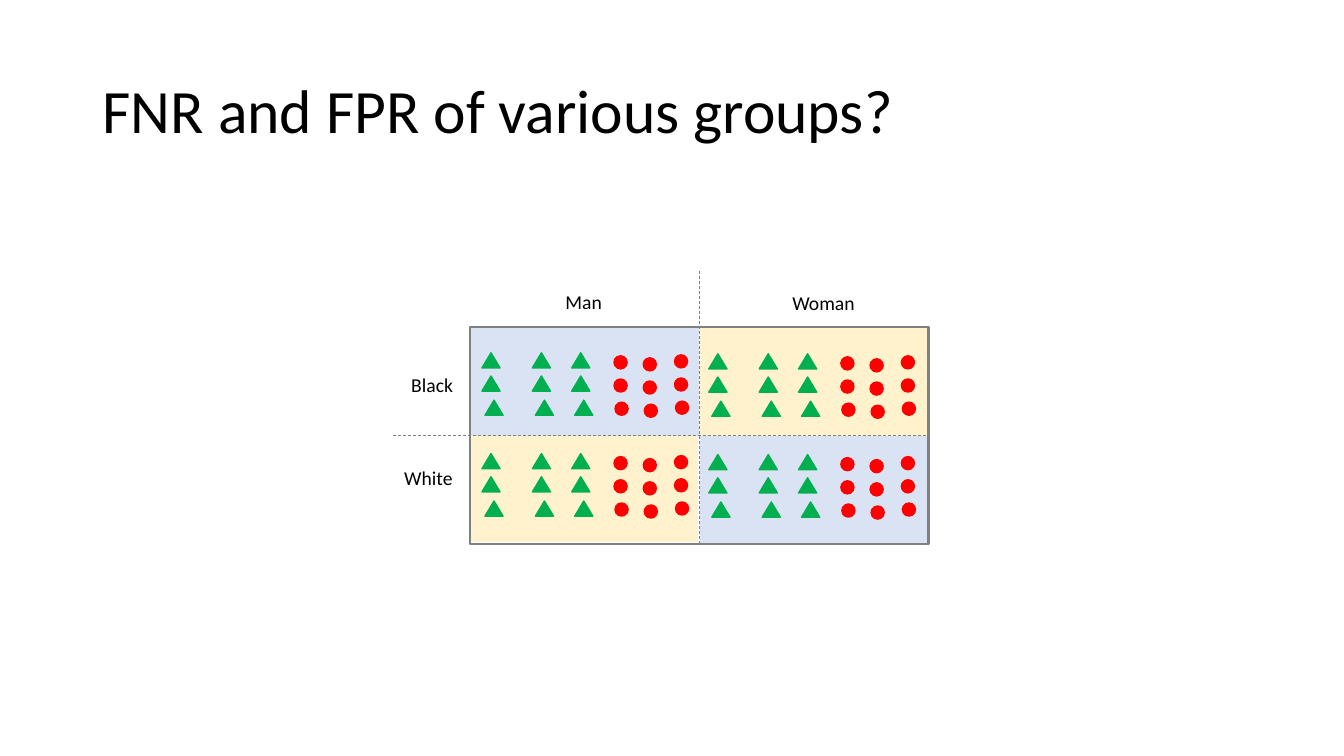
from dataclasses import dataclass
from itertools import product

from lxml.etree import SubElement
from pptx import Presentation
from pptx.dml.color import RGBColor
from pptx.enum.dml import MSO_LINE
from pptx.enum.shapes import MSO_CONNECTOR, MSO_SHAPE
from pptx.enum.text import MSO_ANCHOR
from pptx.oxml.ns import qn
from pptx.util import Inches, Pt


@dataclass(frozen=True)
class Theme:
    font: str = "Calibri"
    title_size: int = 44
    label_size: int = 14
    text: str = "000000"
    frame: str = "808080"
    blue: str = "DAE3F3"
    yellow: str = "FFF2CC"
    green: str = "00B050"
    red: str = "FF0000"


THEME = Theme()

# Quadrants: offset from the frame's corner, size, colour
QUADRANTS = [
    (2.29, 0, 2.26, 1.08, THEME.yellow),
    (0.02, 1.06, 2.24, 1.07, THEME.yellow),
    (0, 0, 2.27, 1.08, THEME.blue),
    (2.29, 1.09, 2.26, 1.07, THEME.blue),
]

# Marks: preset, width, height, colour, column offsets, row offsets
MARKS = [
    (MSO_SHAPE.ISOSCELES_TRIANGLE, 0.18, 0.15, THEME.green,
     [(0, 0), (0.5, 0), (0.89, 0)], [(0, 0), (0, 0.23), (0.03, 0.47)]),
    (MSO_SHAPE.OVAL, 0.13, 0.13, THEME.red,
     [(1.31, 0.03), (1.6, 0.05), (1.91, 0.02)],
     [(0, 0), (0, 0.23), (0.01, 0.46)]),
]


def add_filled(shapes, preset, left, top, width, height, color):
    shape = shapes.add_shape(preset, Inches(left), Inches(top),
                             Inches(width), Inches(height))
    shape.shadow.inherit = False
    shape.fill.solid()
    shape.fill.fore_color.rgb = RGBColor.from_string(color)
    shape.line.color.rgb = RGBColor.from_string(color)
    shape.line.width = Pt(1)
    return shape


def add_text(slide, text, left, top, width, height, size, wrap=False):
    box = slide.shapes.add_textbox(Inches(left), Inches(top),
                                   Inches(width), Inches(height))
    frame = box.text_frame
    frame.word_wrap = wrap
    paragraph = frame.paragraphs[0]
    paragraph.text = text
    paragraph.font.name = THEME.font
    paragraph.font.size = Pt(size)
    paragraph.font.color.rgb = RGBColor.from_string(THEME.text)
    return frame


def add_title(slide, left, top, width, height):
    title = add_text(slide, "FNR and FPR of various groups?", left, top,
                     width, height, THEME.title_size, wrap=True)
    title.vertical_anchor = MSO_ANCHOR.MIDDLE
    title.paragraphs[0].line_spacing = 0.9


def add_divider(slide, start_x, start_y, grid_frame, side):
    divider = slide.shapes.add_connector(
        MSO_CONNECTOR.STRAIGHT, Inches(start_x), Inches(start_y),
        Inches(start_x), Inches(start_y))
    divider.end_connect(grid_frame, side)
    divider.line.color.rgb = RGBColor.from_string(THEME.frame)
    divider.line.width = Pt(0.5)
    divider.line.dash_style = MSO_LINE.DASH
    SubElement(divider._element.spPr, qn("a:effectLst"))


def add_marks(slide, left, top):
    group = slide.shapes.add_group_shape()
    for preset, width, height, color, columns, rows in MARKS:
        for (col_x, col_y), (row_x, row_y) in product(columns, rows):
            add_filled(group.shapes, preset, left + col_x + row_x,
                       top + col_y + row_y, width, height, color)


def add_group_grid(slide, left, top, width, height):
    # Coloured quadrants
    for x, y, w, h, color in QUADRANTS:
        add_filled(slide.shapes, MSO_SHAPE.RECTANGLE,
                   left + x, top + y, w, h, color)

    # Frame and dashed dividers
    grid_frame = add_filled(slide.shapes, MSO_SHAPE.RECTANGLE,
                            left, top, width, height, THEME.frame)
    grid_frame.fill.background()
    grid_frame.line.width = Pt(1.5)
    add_divider(slide, left - 0.76, top + height / 2, grid_frame, 3)
    add_divider(slide, left + width / 2, top - 0.55, grid_frame, 2)

    # Row and column labels
    for label, x, y, w in [("Black", -0.68, 0.41, 0.62),
                           ("White", -0.75, 1.33, 0.69),
                           ("Man", 0.85, -0.41, 0.57),
                           ("Woman", 3.1, -0.4, 0.83)]:
        add_text(slide, label, left + x, top + y, w, 0.34, THEME.label_size)

    # Triangles and circles in each quadrant
    for row, column in product(range(2), repeat=2):
        add_marks(slide, left + 0.12 + 2.25 * column,
                  top + 0.26 + row + 0.01 * column)


def main():
    deck = Presentation()
    deck.slide_width, deck.slide_height = Inches(13.33), Inches(7.5)
    slide = deck.slides.add_slide(deck.slide_layouts[6])
    add_title(slide, 0.92, 0.4, 11.5, 1.45)
    add_group_grid(slide, 4.66, 3.24, 4.55, 2.16)
    deck.save("out.pptx")


if __name__ == "__main__":
    main()
